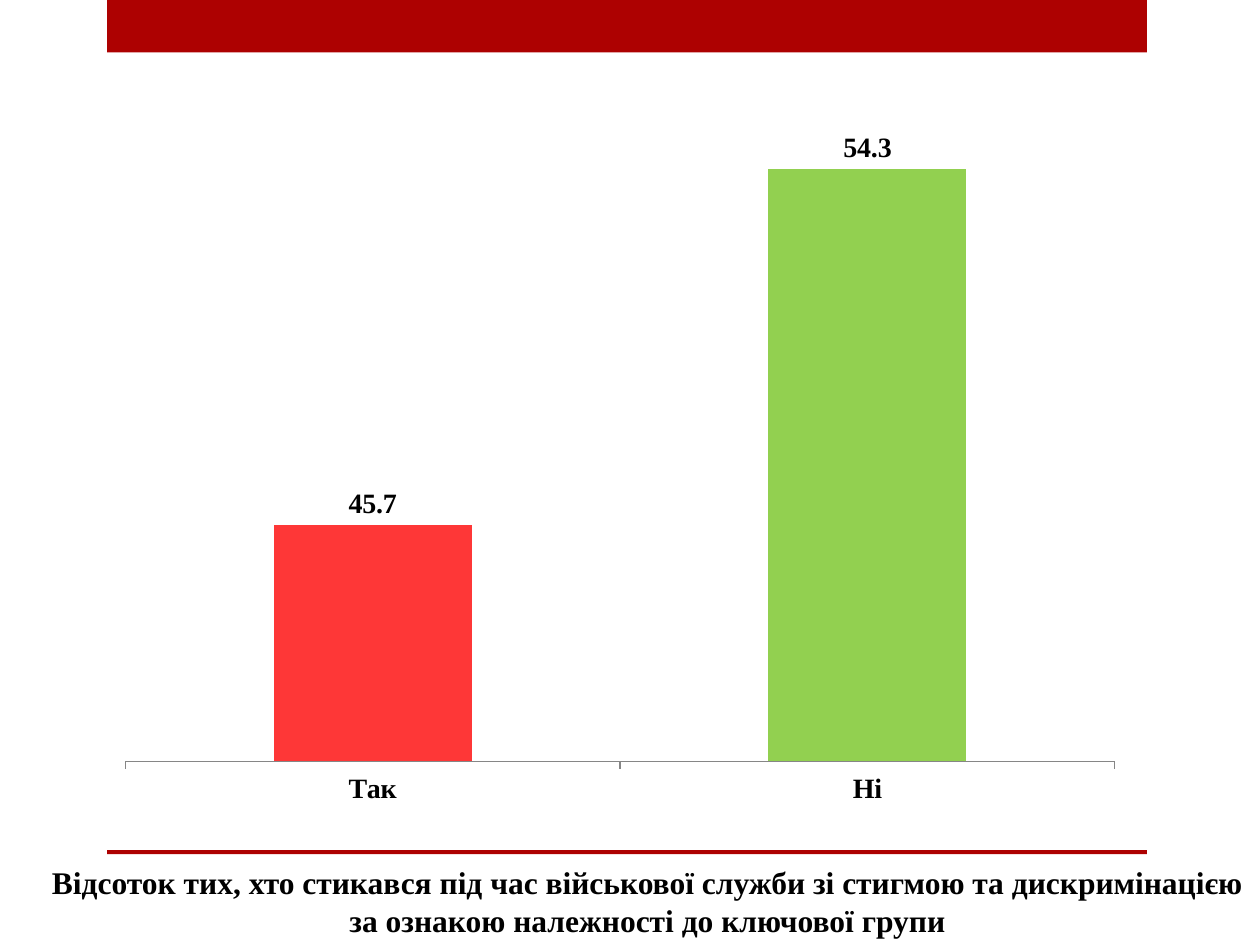
"""Build a slide with a two-column chart and a caption under a red rule."""
from pptx import Presentation
from pptx.chart.data import CategoryChartData
from pptx.dml.color import RGBColor
from pptx.enum.chart import XL_CHART_TYPE, XL_LABEL_POSITION, XL_TICK_MARK
from pptx.enum.shapes import MSO_SHAPE
from pptx.enum.text import MSO_ANCHOR, PP_ALIGN
from pptx.util import Cm, Pt

RECTANGLE = MSO_SHAPE.RECTANGLE
COLUMN = XL_CHART_TYPE.COLUMN_CLUSTERED
OUTSIDE_END = XL_LABEL_POSITION.OUTSIDE_END
TICK_OUT, TICK_NONE = XL_TICK_MARK.OUTSIDE, XL_TICK_MARK.NONE
BOTTOM = MSO_ANCHOR.BOTTOM
CENTER = PP_ALIGN.CENTER

DARK_RED = RGBColor(0xAD, 0x01, 0x01)
RED = RGBColor(0xFE, 0x37, 0x37)
GREEN = RGBColor(0x92, 0xD0, 0x50)
GREY = RGBColor(0x86, 0x86, 0x86)
BLACK = RGBColor(0, 0, 0)
FONT = "Times New Roman"


def add_text(s, text, left, top, width, height, size=18, bold=True,
             color=BLACK, align=CENTER, anchor=BOTTOM):
    tf = s.shapes.add_textbox(Cm(left), Cm(top), Cm(width), Cm(height)).text_frame
    tf.word_wrap = True
    tf.vertical_anchor = anchor
    p = tf.paragraphs[0]
    p.alignment = align
    r = p.add_run()
    r.text = text
    r.font.name = FONT
    r.font.size = Pt(size)
    r.font.bold = bold
    r.font.color.rgb = color


prs = Presentation()
prs.slide_width, prs.slide_height = Cm(25.4), Cm(19.05)
s = prs.slides.add_slide(prs.slide_layouts[6])

for top, height in ((0, 1.06), (17.14, 0.08)):
    sp = s.shapes.add_shape(RECTANGLE, Cm(2.16), Cm(top), Cm(20.96), Cm(height))
    sp.shadow.inherit = False
    sp.fill.solid()
    sp.fill.fore_color.rgb = DARK_RED
    sp.line.fill.background()

add_text(s, "Відсоток тих, хто стикався під час військової служби зі стигмою "
            "та дискримінацією за ознакою належності до ключової групи",
         0.71, 17.27, 24.69, 1.78)

data = CategoryChartData(number_format="###0.0")
data.categories = ["Так", "Ні"]
data.add_series("Series 1", (45.7, 54.3))
chart = s.shapes.add_chart(COLUMN, Cm(2.11), Cm(1.7), Cm(20.78), Cm(14.83), data).chart
chart.has_legend = False
chart.has_title = False
chart.font.name = FONT
chart.font.size = Pt(16)
chart.font.bold = True
chart.font.color.rgb = BLACK

axis = chart.category_axis
axis.major_tick_mark = TICK_OUT
axis.minor_tick_mark = TICK_NONE
axis.format.line.color.rgb = GREY

axis = chart.value_axis
axis.minimum_scale, axis.maximum_scale = 40, 56
axis.has_major_gridlines = False
axis.visible = False

plot = chart.plots[0]
plot.gap_width = 150
plot.vary_by_categories = False
plot.has_data_labels = True
labels = plot.data_labels
labels.show_value = True
labels.number_format = "###0.0"
labels.number_format_is_linked = False
labels.position = OUTSIDE_END

series = plot.series[0]
series.invert_if_negative = False
series.format.fill.solid()
series.format.fill.fore_color.rgb = DARK_RED
for i, color in enumerate((RED, GREEN)):
    fill = series.points[i].format.fill
    fill.solid()
    fill.fore_color.rgb = color

prs.save("out.pptx")
